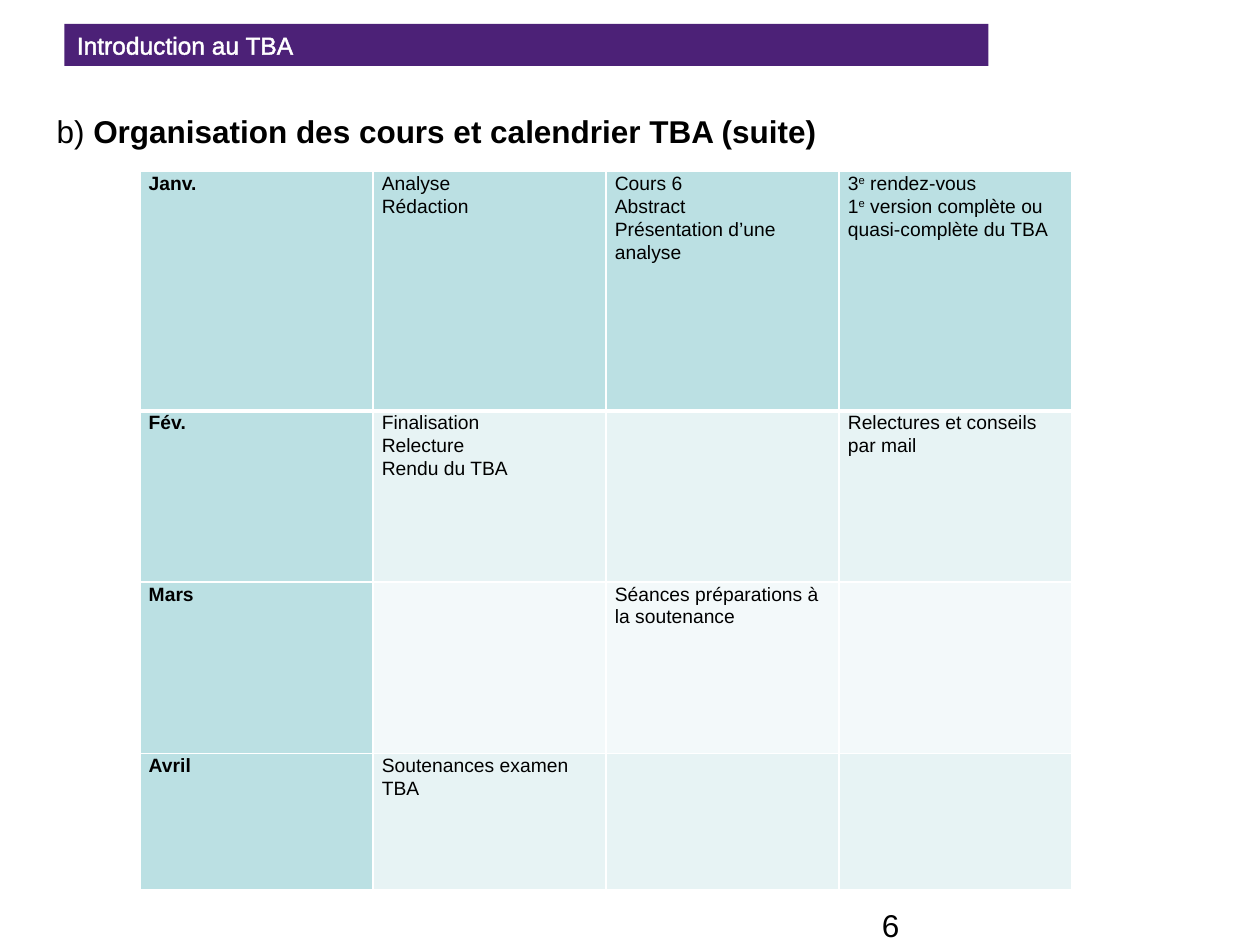
from lxml import etree
from pptx import Presentation
from pptx import util as u
from pptx.dml.color import RGBColor
from pptx.enum import shapes, text
from pptx.oxml import ns

FONT = "Arial"
BLACK, WHITE = "000000", "FFFFFF"
PURPLE, TEAL = "4C2177", "BBE0E3"
ROW_FILLS = [TEAL, "E7F3F4", "F3F9FA", "E7F3F4"]
ROW_HEIGHTS = [136.8, 97.9, 97.9, 77.8]
COLUMN_WIDTH = 133.2
CALENDAR = [
    ["Janv.", "Analyse\nRédaction", "Cours 6\nAbstract\nPrésentation d’une analyse",
     "3^e^ rendez-vous\n1^e^ version complète ou quasi-complète du TBA"],
    ["Fév.", "Finalisation\nRelecture\nRendu du TBA", "", "Relectures et conseils par mail"],
    ["Mars", "", "Séances préparations à la soutenance", ""],
    ["Avril", "Soutenances examen TBA", "", ""],
]


def rgb(value):
    """Turn a hex string into a colour."""
    return RGBColor.from_string(value)


def add_run(paragraph, words, size, color=BLACK, bold=False):
    """Append a formatted run to a paragraph."""
    run = paragraph.add_run()
    run.text = words
    run.font.name = FONT
    run.font.size = u.Pt(size)
    run.font.bold = bold
    run.font.color.rgb = rgb(color)
    return run


def add_line(parent, tag, width, color=WHITE, index=0):
    """Insert a solid line element into its parent at the given index."""
    line = etree.Element(ns.qn(tag), w=str(u.Pt(width)))
    fill = etree.SubElement(line, ns.qn("a:solidFill"))
    etree.SubElement(fill, ns.qn("a:srgbClr"), val=color)
    parent.insert(index, line)


def add_text(slide, left, top, width, height, parts):
    """Add a text box of one paragraph made of (words, bold) parts."""
    box = slide.shapes.add_textbox(u.Pt(left), u.Pt(top), u.Pt(width), u.Pt(height))
    box.text_frame.word_wrap = True
    for words, bold in parts:
        add_run(box.text_frame.paragraphs[0], words, 18, bold=bold)


def add_banner(slide, words):
    """Add the filled title bar with its outlined text."""
    banner = slide.shapes.add_shape(
        shapes.MSO_SHAPE.RECTANGLE, u.Pt(36.8), u.Pt(13.6), u.Pt(528), u.Pt(24))
    banner.shadow.inherit = False
    banner.fill.solid()
    banner.fill.fore_color.rgb = rgb(PURPLE)
    banner.line.fill.background()
    frame = banner.text_frame
    frame.vertical_anchor = text.MSO_ANCHOR.MIDDLE
    paragraph = frame.paragraphs[0]
    paragraph.alignment = text.PP_ALIGN.LEFT
    run = add_run(paragraph, words, 14, WHITE)
    add_line(run.font._element, "a:ln", 0.75)


def fill_cell(cell, words, bold):
    """Write the lines of a cell, with superscripts between carets."""
    cell.margin_left = cell.margin_right = u.Pt(5)
    cell.margin_top = cell.margin_bottom = u.Pt(0)
    frame = cell.text_frame
    for number, line in enumerate(words.split("\n")):
        paragraph = frame.add_paragraph() if number else frame.paragraphs[0]
        paragraph.line_spacing = 1.07
        for position, part in enumerate(line.split("^")):
            if part:
                run = add_run(paragraph, part, 11, bold=bold)
                if position % 2:
                    run.font._element.set("baseline", "30000")


def style_cell(cell, color, top, bottom):
    """Set the fill and the four white borders of a cell."""
    cell.fill.solid()
    cell.fill.fore_color.rgb = rgb(color)
    properties = cell._tc.get_or_add_tcPr()
    borders = [("a:lnL", 1), ("a:lnR", 1), ("a:lnT", top), ("a:lnB", bottom)]
    for index, (tag, width) in enumerate(borders):
        add_line(properties, tag, width, index=index)


def add_calendar(slide):
    """Add the calendar table."""
    columns = len(CALENDAR[0])
    table = slide.shapes.add_table(
        len(CALENDAR), columns, u.Pt(80), u.Pt(98),
        u.Pt(COLUMN_WIDTH * columns), u.Pt(sum(ROW_HEIGHTS))).table
    for column in table.columns:
        column.width = u.Pt(COLUMN_WIDTH)
    for r, row in enumerate(CALENDAR):
        table.rows[r].height = u.Pt(ROW_HEIGHTS[r])
        for c, words in enumerate(row):
            cell = table.cell(r, c)
            fill_cell(cell, words, bold=c == 0)
            style_cell(cell, ROW_FILLS[r] if c else TEAL,
                       top=3 if r == 1 else 1, bottom=3 if r == 0 else 1)


def main():
    """Build and save the slide."""
    presentation = Presentation()
    presentation.slide_width, presentation.slide_height = u.Pt(720), u.Pt(540)
    slide = presentation.slides.add_slide(presentation.slide_layouts[6])
    add_text(slide, 496.8, 514, 130.3, 26.6, [("6", False)])
    add_text(slide, 25.2, 60.5, 641.5, 29,
             [("b) ", False), ("Organisation des cours et calendrier TBA (suite)", True)])
    add_banner(slide, "Introduction au TBA")
    add_calendar(slide)
    presentation.save("out.pptx")


if __name__ == "__main__":
    main()
